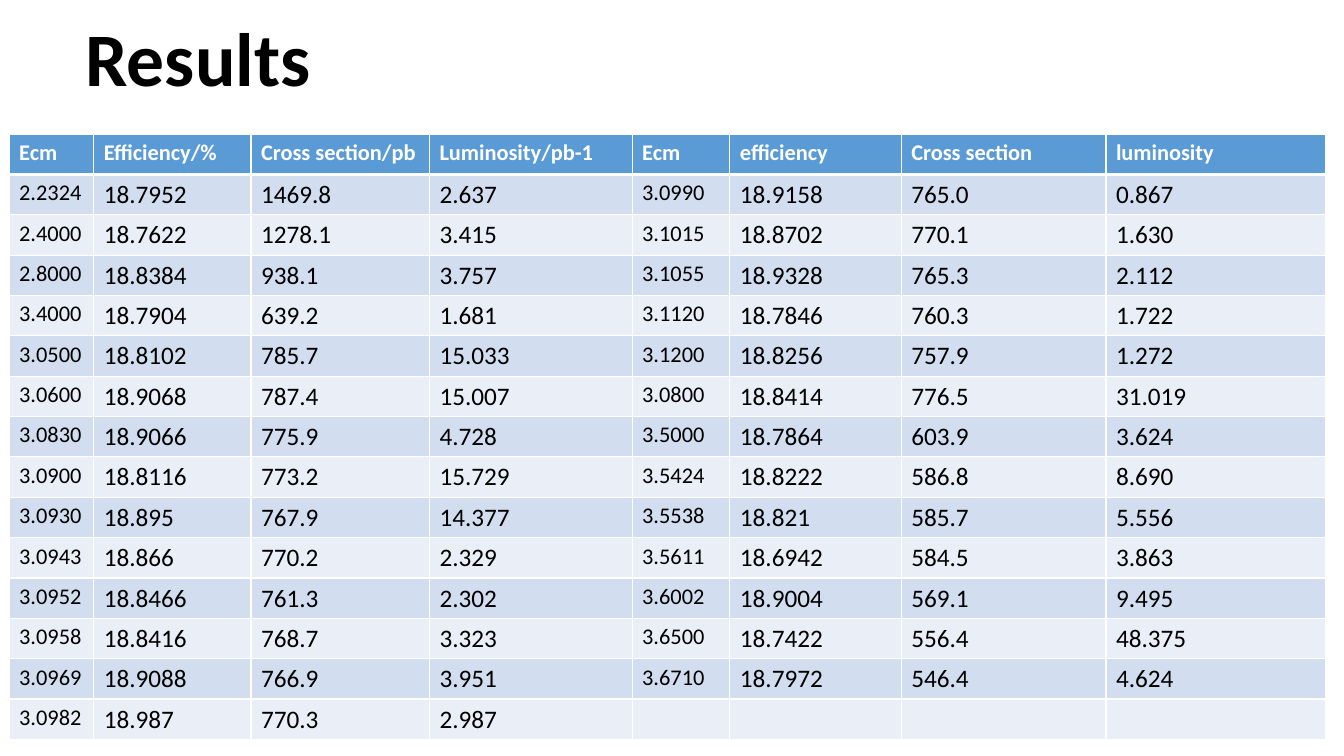
"""Build the Results slide: a table of efficiency, cross section and luminosity by energy."""
from itertools import zip_longest

from lxml.etree import SubElement
from pptx import Presentation
from pptx.dml.color import RGBColor
from pptx.enum.text import MSO_ANCHOR
from pptx.oxml.ns import qn
from pptx.util import Inches, Pt

TITLE = "Results"
HEADER = ("Ecm", "Efficiency/%", "Cross section/pb", "Luminosity/pb-1",
          "Ecm", "efficiency", "Cross section", "luminosity")
LEFT_ROWS = [
    ("2.2324", "18.7952", "1469.8", "2.637"),
    ("2.4000", "18.7622", "1278.1", "3.415"),
    ("2.8000", "18.8384", "938.1", "3.757"),
    ("3.4000", "18.7904", "639.2", "1.681"),
    ("3.0500", "18.8102", "785.7", "15.033"),
    ("3.0600", "18.9068", "787.4", "15.007"),
    ("3.0830", "18.9066", "775.9", "4.728"),
    ("3.0900", "18.8116", "773.2", "15.729"),
    ("3.0930", "18.895", "767.9", "14.377"),
    ("3.0943", "18.866", "770.2", "2.329"),
    ("3.0952", "18.8466", "761.3", "2.302"),
    ("3.0958", "18.8416", "768.7", "3.323"),
    ("3.0969", "18.9088", "766.9", "3.951"),
    ("3.0982", "18.987", "770.3", "2.987"),
]
RIGHT_ROWS = [
    ("3.0990", "18.9158", "765.0", "0.867"),
    ("3.1015", "18.8702", "770.1", "1.630"),
    ("3.1055", "18.9328", "765.3", "2.112"),
    ("3.1120", "18.7846", "760.3", "1.722"),
    ("3.1200", "18.8256", "757.9", "1.272"),
    ("3.0800", "18.8414", "776.5", "31.019"),
    ("3.5000", "18.7864", "603.9", "3.624"),
    ("3.5424", "18.8222", "586.8", "8.690"),
    ("3.5538", "18.821", "585.7", "5.556"),
    ("3.5611", "18.6942", "584.5", "3.863"),
    ("3.6002", "18.9004", "569.1", "9.495"),
    ("3.6500", "18.7422", "556.4", "48.375"),
    ("3.6710", "18.7972", "546.4", "4.624"),
]
COLUMN_WIDTHS = (0.84, 1.56, 1.77, 2.01, 0.97, 1.7, 2.03, 2.18)
ROW_HEIGHT = 0.4
TABLE_LEFT, TABLE_TOP = 0.09, 1.33
TITLE_BOX = (0.75, 0.07, 11.5, 1.1)
WHITE, BLACK, BLUE = "FFFFFF", "000000", "5B9BD5"
BANDS = ("EAEFF7", "D2DEEF")
TITLE_FORMAT = {"name": "Calibri", "size": Pt(54), "bold": True}
HEADER_FORMAT = {"name": "Calibri", "size": Pt(16), "bold": True}
ENERGY_FORMAT = {"name": "Calibri", "size": Pt(16), "bold": False}
VALUE_FORMAT = {"name": "Calibri", "size": Pt(18), "bold": False}


def color(hex_value):
    return RGBColor.from_string(hex_value)


def write(para, text, font_format, hex_value):
    span = para.add_run()
    span.text = text
    for name, value in font_format.items():
        setattr(span.font, name, value)
    span.font.color.rgb = color(hex_value)


def add_borders(cell, row):
    """Draw thin white borders, thicker under the header."""
    widths = {"lnL": 1, "lnR": 1, "lnT": 3 if row == 1 else 1, "lnB": 3 if row == 0 else 1}
    properties = cell._tc.get_or_add_tcPr()
    for tag, width in widths.items():
        line = SubElement(properties, qn(f"a:{tag}"), w=str(Pt(width)))
        SubElement(SubElement(line, qn("a:solidFill")), qn("a:srgbClr"), val=WHITE)


def add_title(page):
    frame = page.shapes.add_textbox(*map(Inches, TITLE_BOX)).text_frame
    frame.word_wrap = True
    frame.vertical_anchor = MSO_ANCHOR.MIDDLE
    para = frame.paragraphs[0]
    para.line_spacing = 0.9
    write(para, TITLE, TITLE_FORMAT, BLACK)


def add_results(page):
    pairs = zip_longest(LEFT_ROWS, RIGHT_ROWS, fillvalue=("",) * 4)
    rows = [HEADER] + [left + right for left, right in pairs]
    area = (TABLE_LEFT, TABLE_TOP, sum(COLUMN_WIDTHS), ROW_HEIGHT * len(rows))
    table = page.shapes.add_table(len(rows), len(HEADER), *map(Inches, area)).table
    for column, width in zip(table.columns, COLUMN_WIDTHS):
        column.width = Inches(width)
    for row, values in enumerate(rows):
        for column, text in enumerate(values):
            cell = table.cell(row, column)
            add_borders(cell, row)
            cell.fill.solid()
            cell.fill.fore_color.rgb = color(BANDS[row % 2] if row else BLUE)
            body_format = VALUE_FORMAT if column % 4 else ENERGY_FORMAT
            if text:
                write(cell.text_frame.paragraphs[0], text,
                      body_format if row else HEADER_FORMAT, BLACK if row else WHITE)


def main():
    deck = Presentation()
    deck.slide_width, deck.slide_height = Inches(13.33), Inches(7.5)
    page = deck.slides.add_slide(deck.slide_layouts[6])
    add_title(page)
    add_results(page)
    deck.save("out.pptx")


if __name__ == "__main__":
    main()
